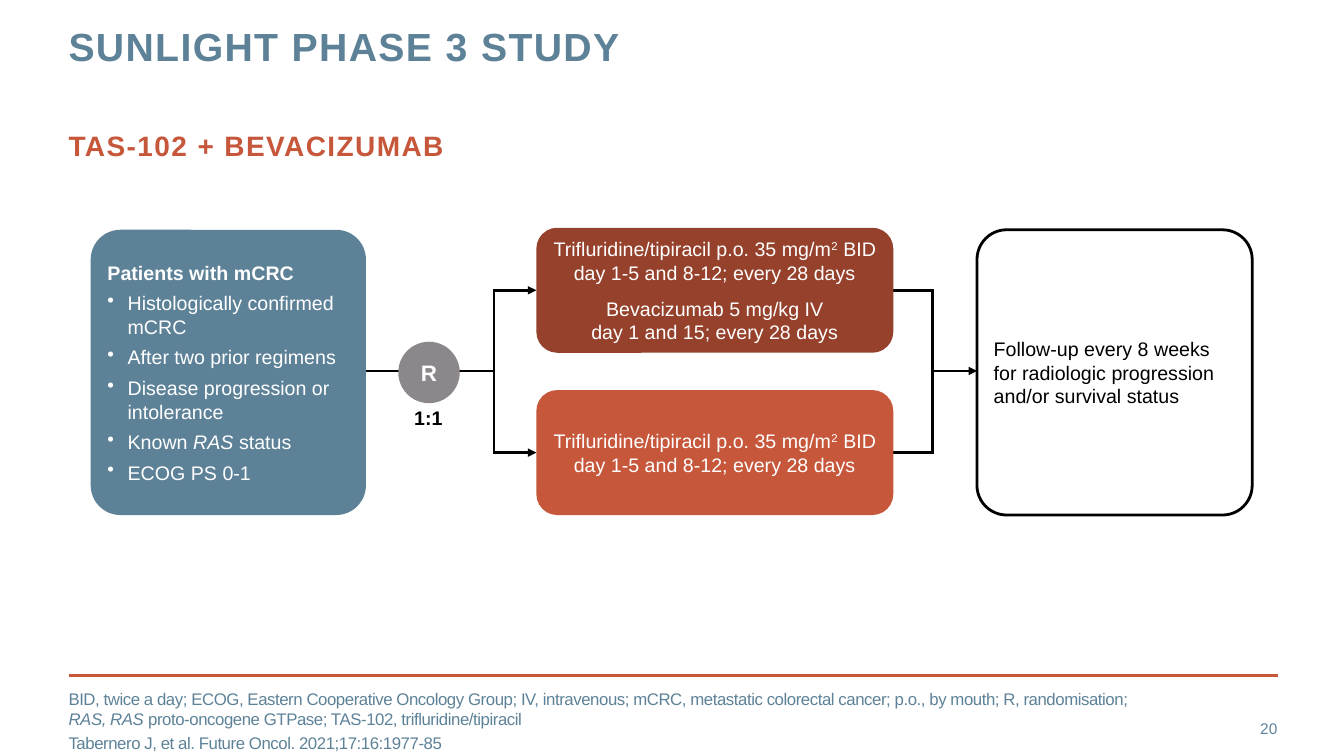
from lxml.etree import SubElement
from pptx import Presentation
from pptx.dml.color import RGBColor
from pptx.enum.shapes import MSO_CONNECTOR as Link, MSO_SHAPE as Shape
from pptx.enum.text import MSO_ANCHOR as Anchor, PP_ALIGN as Align
from pptx.oxml.ns import qn
from pptx.util import Pt

BLUE = RGBColor(0x5D, 0x82, 0x98)
ORANGE = RGBColor(0xC6, 0x57, 0x3B)
BROWN = RGBColor(0x95, 0x41, 0x2B)
GREY = RGBColor(0x8B, 0x87, 0x8B)
WHITE = RGBColor(0xFF, 0xFF, 0xFF)
BLACK = RGBColor(0x00, 0x00, 0x00)

ITALIC = {"italic": True}
RAISED = {"baseline": 30000}


class TrialPage:
    """Draws styled elements on one page, with lengths in px at 100 per inch."""

    scale = 9144
    font_name = "Arial"
    line_width = Pt(2)

    def __init__(self, deck):
        self.page = deck.slides.add_slide(deck.slide_layouts[6])

    def emu(self, *lengths):
        return [length * self.scale for length in lengths]

    def span(self, para, text, color, spacing=0, baseline=0, **font):
        for index, line in enumerate(text.split("\n")):
            if index:
                para.add_line_break()
            span = para.add_run()
            span.text = line
            span.font.color.rgb = color
            for name, value in {"name": self.font_name, **font}.items():
                setattr(span.font, name, value)
            for name, value in {"spc": spacing, "baseline": baseline}.items():
                if value:
                    span._r.get_or_add_rPr().set(name, str(value))

    def bullet(self, para, color):
        props = para._p.get_or_add_pPr()
        for name, value in zip(("marL", "indent"), self.emu(20, -20)):
            props.set(name, str(value))
        fill = SubElement(SubElement(props, qn("a:buClr")), qn("a:srgbClr"))
        fill.set("val", str(color))
        SubElement(props, qn("a:buChar")).set("char", "•")

    def fill_text(self, box, paras, color, size, insets=(0, 0), align=Align.LEFT,
                  anchor=Anchor.MIDDLE, wrap=True, before=0, after=0, leading=None,
                  bullets=False, **font):
        frame = box.text_frame
        side, edge = self.emu(*insets)
        layout = {"word_wrap": wrap, "vertical_anchor": anchor,
                  "margin_left": side, "margin_right": side,
                  "margin_top": edge, "margin_bottom": edge}
        for name, value in layout.items():
            setattr(frame, name, value)
        for index, spans in enumerate(paras):
            para = frame.add_paragraph() if index else frame.paragraphs[0]
            if bullets and index:
                self.bullet(para, color)
            rhythm = {"alignment": align, "space_after": Pt(after), "line_spacing": leading,
                      "space_before": Pt(before if index else 0)}
            for name, value in rhythm.items():
                setattr(para, name, value)
            for text, extra in spans:
                self.span(para, text, color, **{"size": Pt(size), **font, **extra})

    def text(self, place, paras, color, size, **style):
        box = self.page.shapes.add_textbox(*self.emu(*place))
        self.fill_text(box, paras, color, size, **style)

    def shape(self, kind, place, fill, paras, color, size, corner=None, outline=None, **style):
        box = self.page.shapes.add_shape(kind, *self.emu(*place))
        box.shadow.inherit = False
        box.fill.solid()
        box.fill.fore_color.rgb = fill
        if corner:
            box.adjustments[0] = corner
        if outline is None:
            box.line.fill.background()
        else:
            box.line.color.rgb = outline
            box.line.width = self.line_width
        self.fill_text(box, paras, color, size, **style)

    def line(self, start, end, color=BLACK, arrow=False):
        link = self.page.shapes.add_connector(Link.STRAIGHT, *self.emu(*start, *end))
        link.line.color.rgb = color
        link.line.width = self.line_width
        props = link._element.spPr
        if arrow:
            SubElement(props.find(qn("a:ln")), qn("a:tailEnd")).set("type", "triangle")
        SubElement(props, qn("a:effectLst"))


def plain(*texts):
    return [[(text, {})] for text in texts]


def draw_frame(page):
    page.line((68, 670), (1268, 670), ORANGE)
    page.text((68, 27, 956, 88), plain("SUNLIGHT PHASE 3 STUDY"), BLUE, 28,
              anchor=Anchor.TOP, leading=Pt(30), bold=True, spacing=100)
    page.text((68, 127, 1200, 77), plain("TAS-102 + BEVACIZUMAB"), ORANGE, 20,
              anchor=Anchor.TOP, bold=True, spacing=100)
    abbreviations = [
        ("BID, twice a day; ECOG, Eastern Cooperative Oncology Group; IV, intravenous; "
         "mCRC, metastatic colorectal cancer; p.o., by mouth; R, randomisation; ", {}),
        ("RAS, RAS", ITALIC),
        (" proto-oncogene GTPase; TAS-102, trifluridine/tipiracil", {})]
    reference = [("Tabernero J, et al. Future Oncol. 2021;17:16:1977-85", {})]
    page.text((68, 695, 1079, 40), [abbreviations, reference], BLUE, 12, before=3, spacing=-30)
    page.text((1181, 703, 86, 40), plain("20"), BLUE, 11, align=Align.RIGHT)


def draw_trial(page):
    chemo = [("Trifluridine/tipiracil p.o. 35 mg/m", {}), ("2", RAISED),
             (" BID\nday 1-5 and 8-12; every 28 days", {})]
    antibody = [("Bevacizumab 5 mg/kg IV\nday 1 and 15; every 28 days", {})]
    arms = [(226, BROWN, [chemo, antibody]), (387, ORANGE, [chemo])]
    arm_left, arm_width, arm_height = 532, 354, 124
    arm_right = arm_left + arm_width
    centers = [top + arm_height // 2 for top, _, _ in arms]
    split, merge, middle = 490, 925, 368
    card_top, card_width, card_height = 228, 273, 283
    card_style = {"corner": 0.108, "insets": (8, 4), "after": 5}

    page.line((363, middle), (split, middle))
    page.line((merge, middle), (969, middle), arrow=True)
    for turn in (split, merge):
        page.line((turn, centers[0] - 1), (turn, centers[1] + 1))
    for (top, fill, paras), center in zip(arms, centers):
        page.line((split, center), (arm_left, center), arrow=True)
        page.line((arm_right, center), (merge, center))
        page.shape(Shape.ROUNDED_RECTANGLE, (arm_left, top, arm_width, arm_height), fill,
                   paras, WHITE, 14, corner=0.167, insets=(0, 5), align=Align.CENTER, before=9)

    page.shape(Shape.OVAL, (395, 339, 61, 61), GREY, plain("R"), WHITE, 16,
               insets=(10, 5), align=Align.CENTER, wrap=False, bold=True)
    page.text((401, 398, 48, 34), plain("1:1"), BLACK, 14, insets=(10, 5),
              anchor=Anchor.TOP, wrap=False, bold=True)

    patients = [[("Patients with mCRC", {"bold": True})],
                *plain("Histologically confirmed mCRC", "After two prior regimens",
                       "Disease progression or intolerance"),
                [("Known ", {}), ("RAS", ITALIC), (" status", {})],
                *plain("ECOG PS 0-1")]
    page.shape(Shape.ROUNDED_RECTANGLE, (90, card_top, card_width, card_height), BLUE,
               patients, WHITE, 14, bullets=True, **card_style)
    follow_up = plain("Follow-up every 8 weeks for radiologic progression and/or survival status")
    page.shape(Shape.ROUNDED_RECTANGLE, (969, card_top, card_width, card_height), WHITE,
               follow_up, BLACK, 14, outline=BLACK, **card_style)


def main():
    deck = Presentation()
    deck.slide_width, deck.slide_height = 1333 * TrialPage.scale, 750 * TrialPage.scale
    page = TrialPage(deck)
    draw_frame(page)
    draw_trial(page)
    deck.save("out.pptx")


if __name__ == "__main__":
    main()
